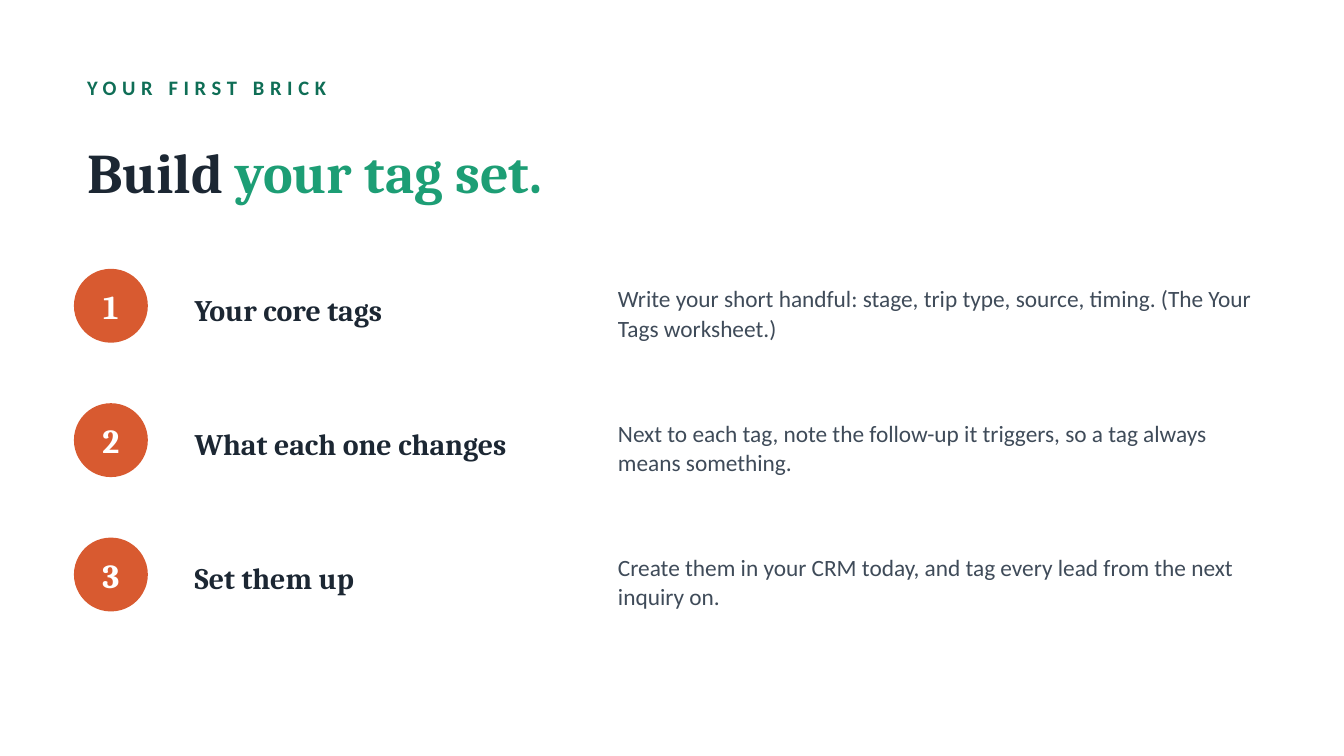
import dataclasses

import pptx
import pptx.dml.color
import pptx.enum.shapes
import pptx.enum.text
import pptx.util

Inches = pptx.util.Inches


@dataclasses.dataclass(frozen=True)
class Theme:
    background: str = "FFFFFF"
    ink: str = "1C2733"
    body: str = "3F4B59"
    label: str = "0F6E56"
    accent: str = "1D9E75"
    badge: str = "D85A30"
    heading_font: str = "Cambria"
    body_font: str = "Calibri"
    label_size: float = 11
    title_size: float = 30
    number_size: float = 18
    step_size: float = 16
    body_size: float = 12.5


def rgb(value):
    return pptx.dml.color.RGBColor.from_string(value)


class SlideBuilder:
    def __init__(self, theme, slide):
        self.theme = theme
        self.slide = slide
        fill = slide.background.fill
        fill.solid()
        fill.fore_color.rgb = rgb(theme.background)

    def text(self, bounds, spans, size, font, bold=True, tracking=None, **paragraph_format):
        box = self.slide.shapes.add_textbox(*map(Inches, bounds))
        frame_format = {
            "word_wrap": True,
            "vertical_anchor": pptx.enum.text.MSO_ANCHOR.MIDDLE,
        }
        for name, value in frame_format.items():
            setattr(box.text_frame, name, value)
        para = box.text_frame.paragraphs[0]
        for name, value in paragraph_format.items():
            setattr(para, name, value)
        font_format = {"name": font, "size": pptx.util.Pt(size), "bold": bold}
        for content, color in spans:
            span = para.add_run()
            span.text = content
            for name, value in font_format.items():
                setattr(span.font, name, value)
            span.font.color.rgb = rgb(color)
            if tracking:
                span._r.get_or_add_rPr().set("spc", str(tracking * 100))

    def badge(self, bounds, number):
        theme = self.theme
        circle = self.slide.shapes.add_shape(
            pptx.enum.shapes.MSO_SHAPE.OVAL, *map(Inches, bounds)
        )
        circle.shadow.inherit = False
        circle.fill.solid()
        circle.fill.fore_color.rgb = rgb(theme.badge)
        circle.line.fill.background()
        self.text(
            bounds, [(str(number), theme.background)], theme.number_size,
            theme.heading_font, alignment=pptx.enum.text.PP_ALIGN.CENTER,
        )

    def step(self, top, number, heading, detail):
        theme = self.theme
        self.badge((0.55, top, 0.55, 0.55), number)
        self.text(
            (1.35, top - 0.05, 3, 0.7), [(heading, theme.ink)],
            theme.step_size, theme.heading_font,
        )
        self.text(
            (4.5, top - 0.05, 5, 0.75), [(detail, theme.body)],
            theme.body_size, theme.body_font, bold=False, line_spacing=1.05,
        )


STEPS = [
    ("Your core tags",
     "Write your short handful: stage, trip type, source, timing. (The Your Tags worksheet.)"),
    ("What each one changes",
     "Next to each tag, note the follow-up it triggers, so a tag always means something."),
    ("Set them up",
     "Create them in your CRM today, and tag every lead from the next inquiry on."),
]


def main():
    theme = Theme()
    deck = pptx.Presentation()
    deck.slide_width = Inches(10)
    deck.slide_height = Inches(10) * 9 // 16
    page = SlideBuilder(theme, deck.slides.add_slide(deck.slide_layouts[6]))

    page.text(
        (0.55, 0.5, 8.9, 0.3), [("YOUR FIRST BRICK", theme.label)],
        theme.label_size, theme.body_font, tracking=3,
    )
    page.text(
        (0.55, 0.85, 8.9, 0.85),
        [("Build ", theme.ink), ("your tag set.", theme.accent)],
        theme.title_size, theme.heading_font,
    )
    for number, (heading, detail) in enumerate(STEPS, start=1):
        page.step(1 + number, number, heading, detail)

    deck.save("out.pptx")


if __name__ == "__main__":
    main()
